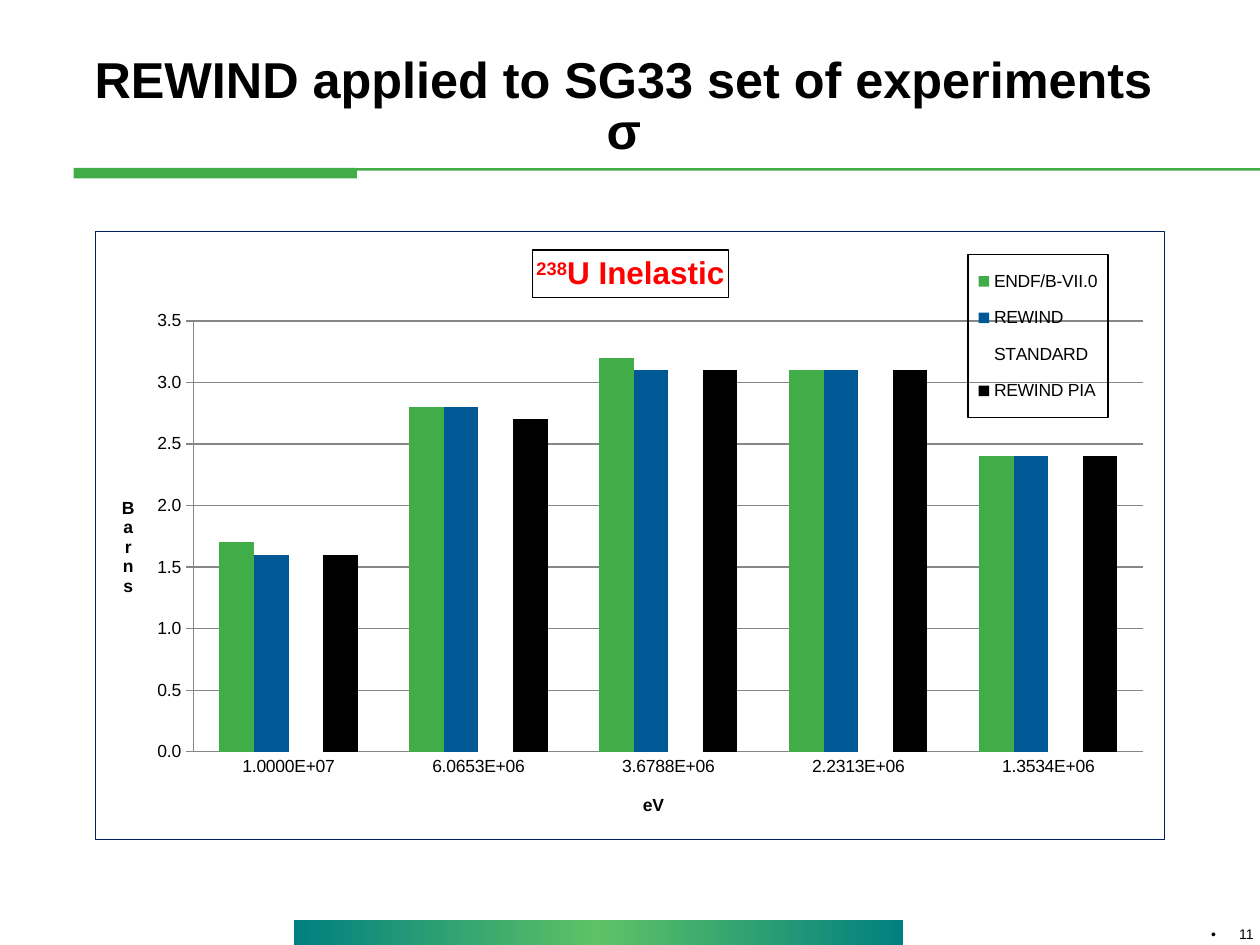
from copy import deepcopy

from lxml import etree
from pptx import Presentation
from pptx.chart.data import CategoryChartData
from pptx.dml.color import RGBColor
from pptx.enum.chart import XL_CHART_TYPE, XL_LEGEND_POSITION, XL_TICK_MARK
from pptx.enum.shapes import MSO_SHAPE
from pptx.enum.text import MSO_ANCHOR, PP_ALIGN
from pptx.oxml.ns import qn
from pptx.util import Pt

RECTANGLE = MSO_SHAPE.RECTANGLE
COLUMNS = XL_CHART_TYPE.COLUMN_CLUSTERED
LEGEND_RIGHT = XL_LEGEND_POSITION.RIGHT
TICK_NONE, TICK_OUT = XL_TICK_MARK.NONE, XL_TICK_MARK.OUTSIDE
BOTTOM, MIDDLE = MSO_ANCHOR.BOTTOM, MSO_ANCHOR.MIDDLE
CENTER, RIGHT = PP_ALIGN.CENTER, PP_ALIGN.RIGHT

FONT = "Arial"
COLORS = {
    "green": "41AD49", "blue": "005995", "white": "FFFFFF", "black": "000000",
    "red": "FF0000", "navy": "002060", "teal": "008080", "lime": "5EC265",
    "grid": "868686",
}
RGB = {name: RGBColor.from_string(value) for name, value in COLORS.items()}


def place(element, index, **fractions):
    layout = element.find(qn("c:layout"))
    if layout is None:
        layout = etree.Element(qn("c:layout"))
        element.insert(index, layout)
    manual = etree.SubElement(layout, qn("c:manualLayout"))
    if "h" in fractions and index == 0:
        etree.SubElement(manual, qn("c:layoutTarget"), val="inner")
    for side in "xy":
        etree.SubElement(manual, qn(f"c:{side}Mode"), val="edge")
    for side, value in fractions.items():
        etree.SubElement(manual, qn(f"c:{side}"), val=str(value))


def outline_after(element, color):
    properties = etree.Element(qn("c:spPr"))
    etree.SubElement(properties, qn("a:noFill"))
    line = etree.SubElement(properties, qn("a:ln"), w=str(Pt(0.75)))
    fill = etree.SubElement(line, qn("a:solidFill"))
    etree.SubElement(fill, qn("a:srgbClr"), val=COLORS[color])
    element.addnext(properties)


deck = Presentation()
deck.slide_width, deck.slide_height = Pt(720), Pt(540)
page = deck.slides.add_slide(deck.slide_layouts[6])

bars = []
for left, top, width, height in [
    (42, 96, 162, 6), (204, 96, 516, 1.5), (168, 525.6, 348, 14.4),
]:
    bar = page.shapes.add_shape(RECTANGLE, Pt(left), Pt(top), Pt(width), Pt(height))
    bar.shadow.inherit = False
    bar.line.fill.background()
    bar.fill.solid()
    bar.fill.fore_color.rgb = RGB["green"]
    bars.append(bar)

footer_bar = bars[-1]
footer_bar.fill.gradient()
footer_bar.fill.gradient_angle = 0
stop_list = next(footer_bar._element.iter(qn("a:gsLst")))
stop_list.append(deepcopy(stop_list[0]))
for stop, position, color in zip(
    footer_bar.fill.gradient_stops, (0, 0.5, 1), ("teal", "lime", "teal")
):
    stop.position = position
    stop.color.rgb = RGB[color]

paras = []
for left, top, width, height, anchor, align, inset_left, inset_right in [
    (38.2, 23.8, 640, 71.3, BOTTOM, CENTER, 3.6, 7.2),
    (552, 527.8, 168, 12.2, MIDDLE, RIGHT, 7.2, 3.6),
]:
    box = page.shapes.add_textbox(Pt(left), Pt(top), Pt(width), Pt(height))
    frame = box.text_frame
    frame.word_wrap = True
    frame.vertical_anchor = anchor
    frame.margin_left, frame.margin_right = Pt(inset_left), Pt(inset_right)
    frame.margin_top = frame.margin_bottom = Pt(3.6)
    para = frame.paragraphs[0]
    para.alignment = align
    paras.append(para)

heading, page_number = paras
heading.line_spacing = 0.85
number_properties = page_number._p.get_or_add_pPr()
number_properties.set("marL", str(Pt(16)))
number_properties.set("indent", str(Pt(-16)))
etree.SubElement(number_properties, qn("a:buFont"), typeface=FONT)
etree.SubElement(number_properties, qn("a:buChar"), char="•")

for para, text, size, bold in [
    (heading, "REWIND applied to SG33 set of experiments", 28.8, True),
    (heading, "σ", 28.8, True),
    (page_number, "11", 8, False),
]:
    if para.runs:
        para.add_line_break()
    span = para.add_run()
    span.text = text
    span.font.name, span.font.size, span.font.bold = FONT, Pt(size), bold
    span.font.color.rgb = RGB["black"]

series_rows = [
    ("ENDF/B-VII.0", "green", (1.7, 2.8, 3.2, 3.1, 2.4)),
    ("REWIND", "blue", (1.6, 2.8, 3.1, 3.1, 2.4)),
    ("STANDARD", "white", (1.6, 2.7, 3.1, 3.1, 2.4)),
    ("REWIND PIA", "black", (1.6, 2.7, 3.1, 3.1, 2.4)),
]
data = CategoryChartData(number_format="0.0")
data.categories = ["1.0000E+07", "6.0653E+06", "3.6788E+06", "2.2313E+06", "1.3534E+06"]
for name, color, values in series_rows:
    data.add_series(name, values)
chart = page.shapes.add_chart(COLUMNS, Pt(54), Pt(132), Pt(612), Pt(348), data).chart
chart.font.name, chart.font.size = FONT, Pt(10)
chart.font.color.rgb = RGB["black"]
outline_after(chart._chartSpace.chart, "navy")
place(chart._chartSpace.chart.plotArea, 0, x=0.092, y=0.147, w=0.888, h=0.709)

plot = chart.plots[0]
plot.gap_width, plot.overlap, plot.vary_by_categories = 150, 0, False
for series, (name, color, values) in zip(plot.series, series_rows):
    series.format.fill.solid()
    series.format.fill.fore_color.rgb = RGB[color]
    series.invert_if_negative = False

energy_axis, barns_axis = chart.category_axis, chart.value_axis
energy_axis.major_tick_mark = TICK_NONE
barns_axis.major_tick_mark = TICK_OUT
barns_axis.minimum_scale, barns_axis.maximum_scale = 0, 3.5
barns_axis.major_unit = 0.5
barns_axis.tick_labels.number_format = "#,##0.0"
barns_axis.tick_labels.number_format_is_linked = False
for ruled in (energy_axis, barns_axis, barns_axis.major_gridlines):
    ruled.format.line.color.rgb = RGB["grid"]
    ruled.format.line.width = Pt(0.75)

for title, parts, size, color, left, top in [
    (chart.chart_title, ("238", "U Inelastic"), 18, "red", 0.409, 0.03),
    (energy_axis.axis_title, ("eV",), 10, "black", 0.509, 0.92),
    (barns_axis.axis_title, ("Barns",), 10, "black", 0.022, 0.43),
]:
    para = title.text_frame.paragraphs[0]
    for text in parts:
        span = para.add_run()
        span.text = text
        span.font.name, span.font.size, span.font.bold = FONT, Pt(size), True
        span.font.color.rgb = RGB[color]
    place(title._element, 1, x=left, y=top)

chart.chart_title.include_in_layout = False
chart.chart_title.text_frame.paragraphs[0].runs[0].font._element.set("baseline", "30000")
chart.chart_title.format.line.color.rgb = RGB["black"]
chart.chart_title.format.line.width = Pt(0.75)
direction = barns_axis.axis_title.text_frame._txBody.bodyPr
direction.set("rot", "0")
direction.set("vert", "wordArtVert")

chart.has_legend = True
legend = chart.legend
legend.position = LEGEND_RIGHT
legend.include_in_layout = True
legend.font.name, legend.font.size = FONT, Pt(10)
place(legend._element, 1, x=0.816, y=0.038, w=0.131, h=0.268)
outline_after(legend._element.find(qn("c:overlay")), "black")

deck.save("out.pptx")
